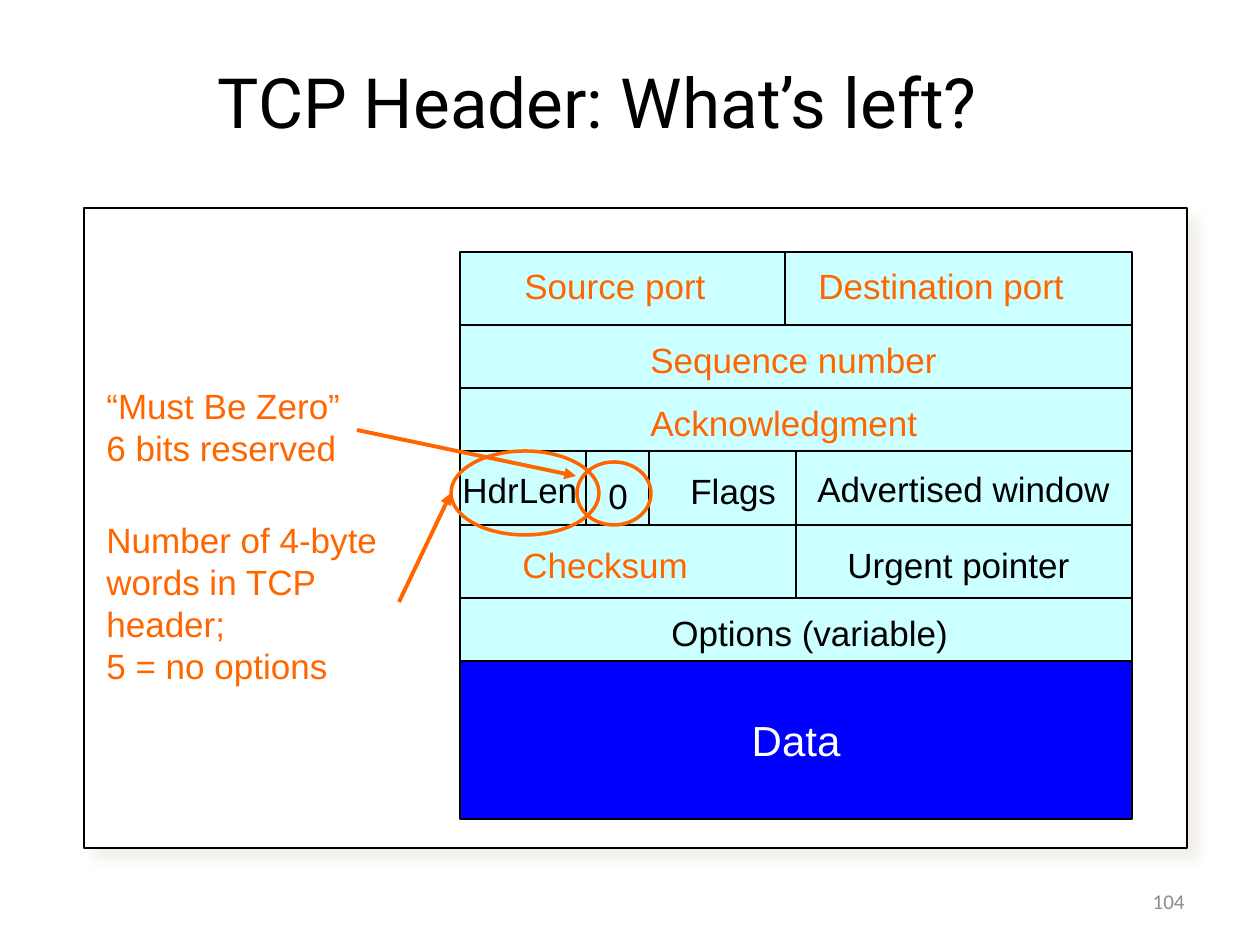
from lxml import etree
from pptx import Presentation
from pptx.dml.color import RGBColor
from pptx.enum import shapes, text
from pptx.oxml.ns import qn
from pptx.util import Pt

PX = 914400 / 126
BLACK = RGBColor(0x00, 0x00, 0x00)
WHITE = RGBColor(0xFF, 0xFF, 0xFF)
ORANGE = RGBColor(0xFF, 0x66, 0x00)
CYAN = RGBColor(0xCC, 0xFF, 0xFF)
BLUE = RGBColor(0x00, 0x00, 0xFF)
GREY = RGBColor(0x8C, 0x8C, 0x8C)
PANEL_SHADOW = "EEECE1"

TITLE = "TCP Header: What’s left?"
PAGE = "104"
PANEL = (84, 208, 1103, 640)
HEADER_LEFT, HEADER_TOP, HEADER_WIDTH = 460, 252, 672
LABEL_HEIGHT = 54

# Row height, cell split (None for a single cell),
# labels as (text, colour, left, offset from row top, width)
ROWS = [
    (73, 325, [("Source port", ORANGE, 512, 6, 207),
               ("Destination port", ORANGE, 806, 6, 271)]),
    (63, None, [("Sequence number", ORANGE, 638, 7, 315)]),
    (63, None, [("Acknowledgment", ORANGE, 638, 7, 296)]),
    (74, 336, [("HdrLen", BLACK, 450, 11, 147),
               ("0", BLACK, 596, 17, 45),
               ("Flags", BLACK, 678, 12, 111),
               ("Advertised window", BLACK, 805, 10, 318)]),
    (73, 336, [("Checksum", ORANGE, 510, 12, 198),
               ("Urgent pointer", BLACK, 835, 12, 247)]),
    (63, None, [("Options (variable)", BLACK, 659, 7, 310)]),
]
UNFILLED = {"HdrLen"}
DATA_HEIGHT = 158
FIELD_DIVIDERS = [(586, 451, 586, 525), (649, 451, 649, 525)]

NOTES = [
    ("“Must Be Zero”\n6 bits reserved", (94, 378, 305, 97)),
    ("Number of 4-byte words in TCP header;\n5 = no options", (94, 512, 305, 181)),
]
RINGS = [(577, 462, 74, 63), (451, 451, 148, 84)]
ARROWS = [(357, 430, 576, 476), (399, 602, 451, 493)]


def emu(*lengths):
    return [round(length * PX) for length in lengths]


def write(frame, content, size, color, font="Arial", align=None):
    paragraph = frame.paragraphs[0]
    paragraph.text = content
    paragraph.alignment = align
    paragraph.font.size = Pt(size)
    paragraph.font.name = font
    paragraph.font.color.rgb = color


def add_outlined(slide, kind, box, fill, line=BLACK, width=0.75):
    shape = slide.shapes.add_shape(kind, *emu(*box))
    shape.shadow.inherit = False
    if fill is None:
        shape.fill.background()
    else:
        shape.fill.solid()
        shape.fill.fore_color.rgb = fill
    shape.line.color.rgb = line
    shape.line.width = Pt(width)
    return shape


def add_cell(slide, box, fill=CYAN):
    return add_outlined(slide, shapes.MSO_SHAPE.RECTANGLE, box, fill)


def add_text(slide, content, box, color, wrap=True, fill=None):
    label = slide.shapes.add_textbox(*emu(*box))
    if fill is not None:
        label.fill.solid()
        label.fill.fore_color.rgb = fill
    label.text_frame.word_wrap = wrap
    label.text_frame.auto_size = text.MSO_AUTO_SIZE.SHAPE_TO_FIT_TEXT
    write(label.text_frame, content, 20, color)


def add_line(slide, ends, color, width, arrow=False):
    line = slide.shapes.add_connector(shapes.MSO_CONNECTOR.STRAIGHT, *emu(*ends))
    line.line.color.rgb = color
    line.line.width = Pt(width)
    properties = line._element.spPr
    if arrow:
        etree.SubElement(properties.find(qn("a:ln")), qn("a:tailEnd"), type="triangle")
    etree.SubElement(properties, qn("a:effectLst"))


def add_panel(slide):
    panel = add_cell(slide, PANEL, WHITE)
    effects = panel._element.spPr.find(qn("a:effectLst"))
    shadow = etree.SubElement(effects, qn("a:outerShdw"), blurRad=str(Pt(5)),
                              dist=str(Pt(8.5)), dir=str(45 * 60000),
                              algn="tl", rotWithShape="0")
    color = etree.SubElement(shadow, qn("a:srgbClr"), val=PANEL_SHADOW)
    etree.SubElement(color, qn("a:alpha"), val="75000")


def add_header(slide):
    top = HEADER_TOP
    for height, split, labels in ROWS:
        edges = [0, split, HEADER_WIDTH] if split else [0, HEADER_WIDTH]
        for start, end in zip(edges, edges[1:]):
            add_cell(slide, (HEADER_LEFT + start, top, end - start, height))
        for content, color, left, offset, width in labels:
            unfilled = content in UNFILLED
            add_text(slide, content, (left, top + offset, width, LABEL_HEIGHT),
                     color, unfilled, None if unfilled else CYAN)
        top += height
    data = add_cell(slide, (HEADER_LEFT, top, HEADER_WIDTH, DATA_HEIGHT), BLUE)
    data.text_frame.vertical_anchor = text.MSO_ANCHOR.MIDDLE
    data.text_frame.word_wrap = False
    write(data.text_frame, "Data", 24, WHITE, align=text.PP_ALIGN.CENTER)
    for ends in FIELD_DIVIDERS:
        add_line(slide, ends, BLACK, 0.75)


def main():
    deck = Presentation()
    deck.slide_width, deck.slide_height = emu(1260, 945)
    slide = deck.slides.add_slide(deck.slide_layouts[5])

    title = slide.shapes.title
    title.left, title.top, title.width, title.height = emu(42, 53, 1111, 95)
    title.text_frame.vertical_anchor = text.MSO_ANCHOR.MIDDLE
    write(title.text_frame, TITLE, 39.6, BLACK, "Roboto", text.PP_ALIGN.CENTER)

    add_panel(slide)
    add_header(slide)
    for content, box in NOTES:
        add_text(slide, content, box, ORANGE)
    for box in RINGS:
        add_outlined(slide, shapes.MSO_SHAPE.OVAL, box, None, ORANGE, 2)
    for ends in ARROWS:
        add_line(slide, ends, ORANGE, 2.25, arrow=True)

    page = slide.shapes.add_textbox(*emu(903, 876, 294, 50))
    page.text_frame.vertical_anchor = text.MSO_ANCHOR.MIDDLE
    page.text_frame.word_wrap = True
    write(page.text_frame, PAGE, 12, GREY, "Calibri", text.PP_ALIGN.RIGHT)

    deck.save("out.pptx")


if __name__ == "__main__":
    main()
